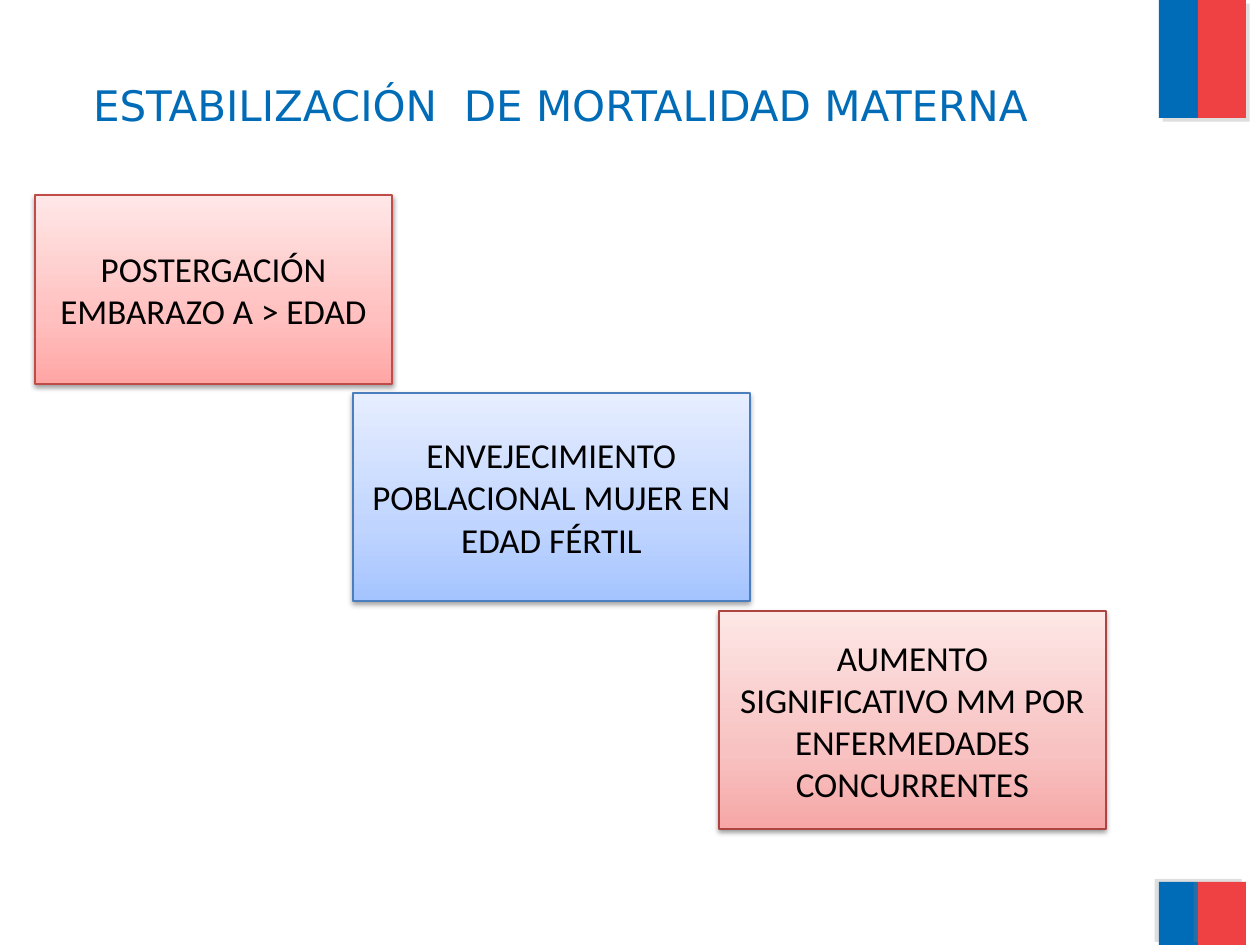
from pptx import Presentation
from pptx.dml.color import RGBColor
from pptx.enum.shapes import MSO_SHAPE
from pptx.enum.text import MSO_ANCHOR, PP_ALIGN
from pptx.oxml import parse_xml
from pptx.oxml.ns import nsdecls
from pptx.util import Emu, Pt

RECT = MSO_SHAPE.RECTANGLE
MIDDLE = MSO_ANCHOR.MIDDLE
LEFT, CENTER = PP_ALIGN.LEFT, PP_ALIGN.CENTER
EMU_PER_PX = 914400 / 126
BLUE, RED = "006CB7", "EF4144"


def px(n):
    return Emu(round(n * EMU_PER_PX))


def rgb(color):
    return RGBColor.from_string(color)


def set_text(tf, text, *, font, size, color, align):
    tf.word_wrap = True
    tf.vertical_anchor = MIDDLE
    p = tf.paragraphs[0]
    p.alignment = align
    r = p.add_run()
    r.text = text
    r.font.name = font
    r.font.size = Pt(size)
    r.font.color.rgb = rgb(color)


def set_shadow(sp, *, color, alpha, blur, dist, angle):
    sp.shadow.inherit = False
    effects = sp._element.spPr.find("{*}effectLst")
    effects.append(parse_xml(
        f'<a:outerShdw {nsdecls("a")} blurRad="{Pt(blur)}" dist="{Pt(dist)}" '
        f'dir="{angle * 60000}" rotWithShape="0"><a:srgbClr val="{color}">'
        f'<a:alpha val="{alpha * 1000}"/></a:srgbClr></a:outerShdw>'))


def set_gradient(fill, sp, colors):
    fill.gradient()
    fill.gradient_angle = 90
    stops = sp._element.spPr.find("{*}gradFill/{*}gsLst")
    for stop in list(stops):
        stops.remove(stop)
    for pos, color in zip((0, 35, 100), colors):
        stops.append(parse_xml(
            f'<a:gs {nsdecls("a")} pos="{pos * 1000}"><a:srgbClr val="{color}"/></a:gs>'))


class Deck:
    title_style = dict(font="DejaVu Sans", size=24, color=BLUE, align=LEFT)
    box_style = dict(font="Calibri", size=20, color="000000", align=CENTER)
    flag_shadow = dict(color="808080", alpha=25, blur=0, dist=3)
    box_shadow = dict(color="000000", alpha=38, blur=3.1, dist=1.6, angle=90)

    def __init__(self, prs):
        self.s = prs.slides.add_slide(prs.slide_layouts[6])

    def rect(self, x, y, w, h):
        return self.s.shapes.add_shape(RECT, px(x), px(y), px(w), px(h))

    def flag(self, y, h, angle):
        for x, w, color in ((1159, 39, BLUE), (1198, 48, RED)):
            sp = self.rect(x, y, w, h)
            sp.fill.solid()
            sp.fill.fore_color.rgb = rgb(color)
            sp.line.fill.background()
            set_shadow(sp, angle=angle, **self.flag_shadow)

    def title(self, text, x, y, w, h):
        tf = self.s.shapes.add_textbox(px(x), px(y), px(w), px(h)).text_frame
        tf.margin_left = tf.margin_right = tf.margin_top = tf.margin_bottom = 0
        set_text(tf, text, **self.title_style)

    def box(self, text, x, y, w, h, colors, line):
        sp = self.rect(x, y, w, h)
        set_gradient(sp.fill, sp, colors)
        sp.line.color.rgb = rgb(line)
        sp.line.width = Pt(0.75)
        set_shadow(sp, **self.box_shadow)
        set_text(sp.text_frame, text, **self.box_style)


def main():
    prs = Presentation()
    prs.slide_width, prs.slide_height = px(1260), px(945)
    deck = Deck(prs)
    deck.flag(0, 118, 45)
    deck.flag(882, 63, 215)
    deck.title("ESTABILIZACIÓN  DE MORTALIDAD MATERNA", 93, 84, 1040, 42)
    deck.box("POSTERGACIÓN EMBARAZO A > EDAD", 35, 195, 357, 189,
             ("FFA6A5", "FFC0BF", "FFE7E7"), "BF4C48")
    deck.box("ENVEJECIMIENTO POBLACIONAL MUJER EN EDAD FÉRTIL", 353, 393, 397, 208,
             ("A4C4FF", "BFD4FF", "E6EEFF"), "4B7EBC")
    deck.box("AUMENTO SIGNIFICATIVO MM POR ENFERMEDADES CONCURRENTES", 719, 611, 387, 218,
             ("F6A7A6", "F7C2C1", "FDE7E6"), "AD4441")
    prs.save("out.pptx")


if __name__ == "__main__":
    main()
